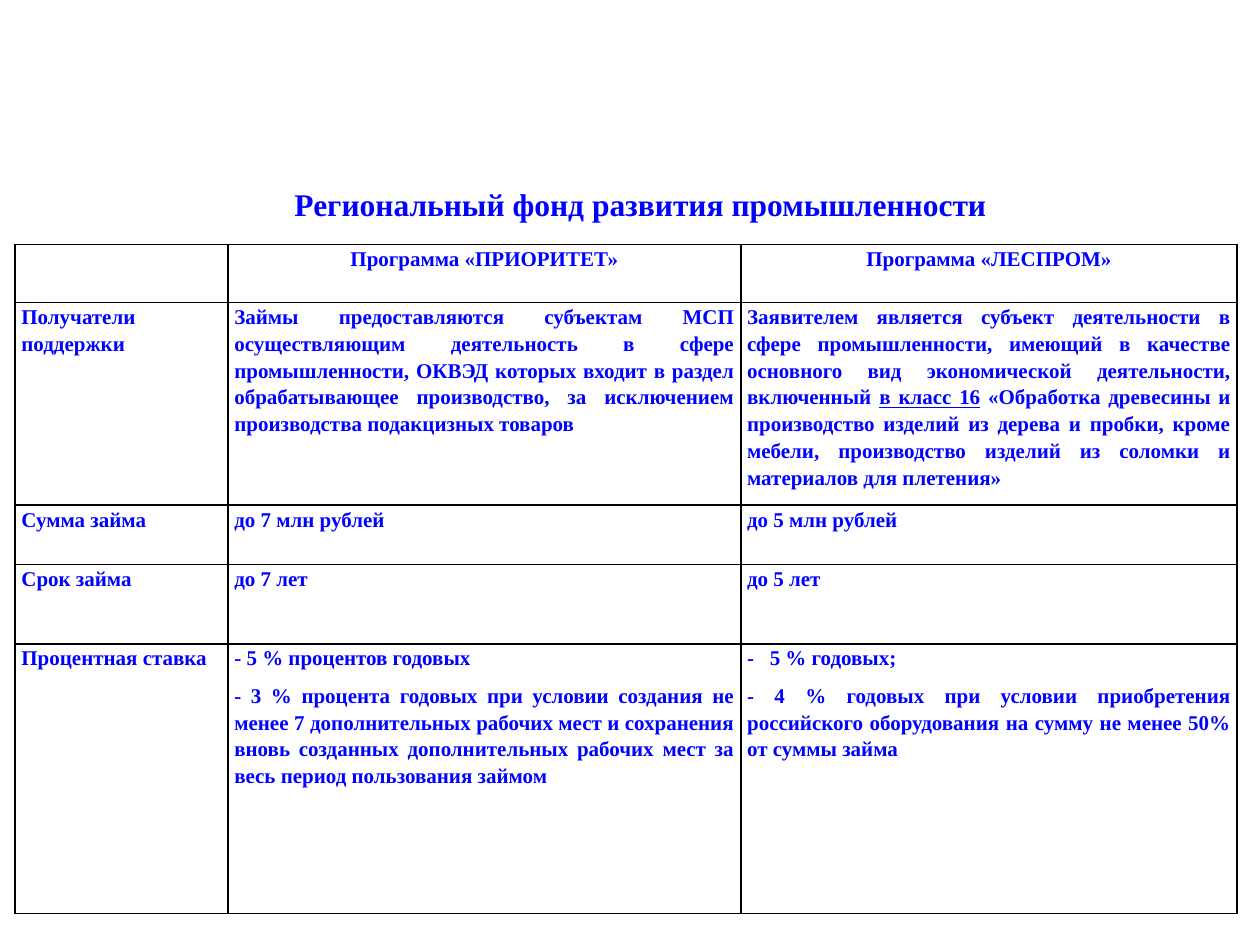
from lxml import etree
from pptx import Presentation, util as u
from pptx.dml.color import RGBColor
from pptx.enum import text as t
from pptx.oxml.ns import qn

BLUE, BLACK = "0000FF", "000000"
LEFT, MID, FULL = t.PP_ALIGN.LEFT, t.PP_ALIGN.CENTER, t.PP_ALIGN.JUSTIFY
COLS = (1.69, 4.07, 3.94)
ROWS = (0.46, 1.61, 0.47, 0.63, 2.14)

# Each cell is a list of paragraphs; underscores enclose underlined words.
CELLS = (
    ([], ["Программа «ПРИОРИТЕТ»"], ["Программа «ЛЕСПРОМ»"]),
    (["Получатели поддержки"],
     ["Займы предоставляются субъектам МСП осуществляющим деятельность в сфере "
      "промышленности, ОКВЭД которых входит в раздел обрабатывающее "
      "производство, за исключением производства подакцизных товаров"],
     ["Заявителем является субъект деятельности в сфере промышленности, имеющий "
      "в качестве основного вид экономической деятельности, включенный "
      "_в класс 16_ «Обработка древесины и производство изделий из дерева и "
      "пробки, кроме мебели, производство изделий из соломки и материалов для "
      "плетения»"]),
    (["Сумма займа"], ["до 7 млн рублей"], ["до 5 млн рублей"]),
    (["Срок займа"], ["до 7 лет"], ["до 5 лет"]),
    (["Процентная ставка"],
     ["- 5 % процентов годовых",
      "- 3 % процента годовых при условии создания не менее 7 дополнительных "
      "рабочих мест и сохранения вновь созданных дополнительных рабочих мест "
      "за весь период пользования займом"],
     ["-\t5 % годовых;",
      "- 4 % годовых при условии приобретения российского оборудования на сумму "
      "не менее 50% от суммы займа"]),
)


def rgb(code):
    return RGBColor.from_string(code)


def add_tab(para, pos):
    tabs = etree.SubElement(para._p.get_or_add_pPr(), qn("a:tabLst"))
    etree.SubElement(tabs, qn("a:tab"), pos=str(u.Inches(pos)), algn="l")


def write(frame, lines, size=12, color=BLUE, align=LEFT, gap=1.0, after=0):
    for i, line in enumerate(lines):
        para = frame.add_paragraph() if i else frame.paragraphs[0]
        if "\t" in line:
            add_tab(para, 0.18)
        para.alignment, para.line_spacing = align, gap
        para.space_before, para.space_after = u.Pt(0), u.Pt(after)
        for j, part in enumerate(line.split("_")):
            run = para.add_run()
            run.text = part
            font = run.font
            font.name, font.size, font.bold = "Times New Roman", u.Pt(size), True
            font.color.rgb = rgb(color)
            if j % 2:
                font.underline = True


def add_title(slide):
    title = slide.shapes.title
    title.left, title.top = u.Inches(1.77), u.Inches(1.42)
    title.width, title.height = u.Inches(6.69), u.Inches(0.4)
    frame = title.text_frame
    frame.word_wrap = True
    frame.auto_size = t.MSO_AUTO_SIZE.NONE
    frame.vertical_anchor = t.MSO_ANCHOR.MIDDLE
    write(frame, ["Региональный фонд развития промышленности "], size=18, align=MID)


def add_edges(cell, color=BLACK, width=1):
    props = cell._tc.get_or_add_tcPr()
    for side in ("lnL", "lnR", "lnT", "lnB"):
        line = etree.SubElement(props, qn("a:" + side), w=str(u.Pt(width)))
        fill = etree.SubElement(line, qn("a:solidFill"))
        etree.SubElement(fill, qn("a:srgbClr"), val=color)


def style(row, col):
    """Give the paragraph format that a table cell takes from its place."""
    if row == 0:
        return {"align": MID}
    if row == 1:
        return {"align": FULL if col else LEFT}
    return {"align": FULL, "after": 6}


def add_grid(slide):
    frame = slide.shapes.add_table(
        len(ROWS), len(COLS), u.Inches(0.12), u.Inches(1.94),
        u.Inches(sum(COLS)), u.Inches(sum(ROWS)))
    table = frame.table
    table.first_row = table.horz_banding = False
    for col, width in zip(table.columns, COLS):
        col.width = u.Inches(width)
    for r, (height, line) in enumerate(zip(ROWS, CELLS)):
        table.rows[r].height = u.Inches(height)
        for c, lines in enumerate(line):
            cell = table.cell(r, c)
            cell.margin_left = cell.margin_right = u.Inches(0.05)
            cell.margin_top = cell.margin_bottom = 0
            add_edges(cell)
            cell.fill.background()
            write(cell.text_frame, lines, gap=1.15, **style(r, c))


def main():
    deck = Presentation()
    deck.slide_width, deck.slide_height = u.Inches(10), u.Inches(7.5)
    slide = deck.slides.add_slide(deck.slide_layouts[5])
    add_title(slide)
    add_grid(slide)
    deck.save("out.pptx")


if __name__ == "__main__":
    main()
